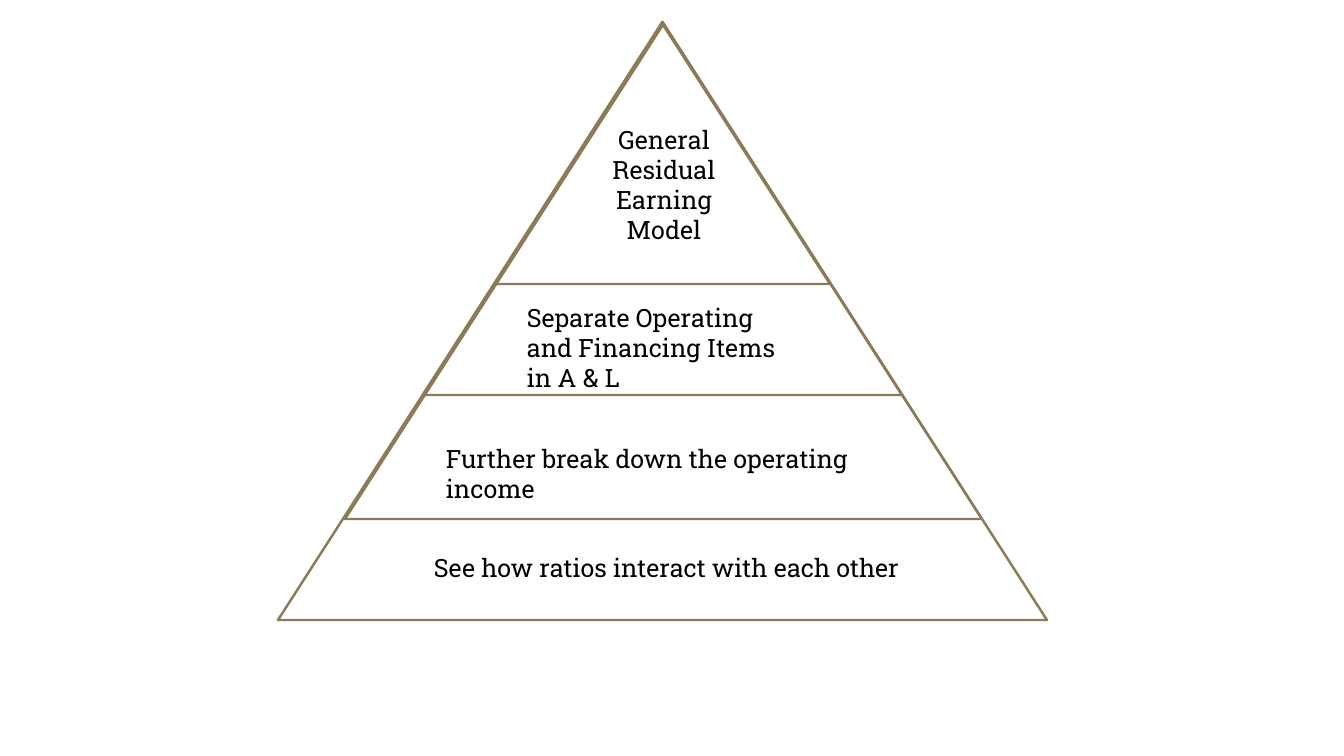
from pptx import Presentation
from pptx.dml.color import RGBColor
from pptx.enum.shapes import MSO_SHAPE
from pptx.enum.text import PP_ALIGN
from pptx.util import Pt

PX = 914400 / 100.8
GOLD = RGBColor(0x8B, 0x7B, 0x57)
BLACK = RGBColor(0, 0, 0)
LEFT, MID = PP_ALIGN.LEFT, PP_ALIGN.CENTER
PEAK = MSO_SHAPE.ISOSCELES_TRIANGLE


def scale(*sizes):
    return [round(size * PX) for size in sizes]


def write(text, box, align=LEFT, size=18, font="Roboto Slab", color=BLACK):
    frame = slide.shapes.add_textbox(*scale(*box)).text_frame
    frame.word_wrap = True
    frame.text = text
    for para in frame.paragraphs:
        para.alignment = align
        para.font.size = Pt(size)
        para.font.name = font
        para.font.color.rgb = color


deck = Presentation()
deck.slide_width, deck.slide_height = scale(1344, 756)
slide = deck.slides.add_slide(deck.slide_layouts[6])

tiers = [
    (278, 22, 769, 598),
    (423, 22, 479, 373),
    (345, 24, 637, 495),
    (495, 24, 335, 260),
]
for box in tiers:
    tier = slide.shapes.add_shape(PEAK, *scale(*box))
    tier.shadow.inherit = False
    tier.fill.background()
    tier.line.color.rgb = GOLD
    tier.line.width = Pt(1.75)

labels = [
    ("General\nResidual Earning\nModel", (591, 119, 146, 132), MID),
    ("Separate Operating and Financing Items in A & L", (517, 297, 295, 72), LEFT),
    ("Further break down the operating income", (436, 438, 467, 40), LEFT),
    ("See how ratios interact with each other", (372, 547, 589, 40), MID),
]
for text, box, align in labels:
    write(text, box, align=align)

deck.save("out.pptx")
